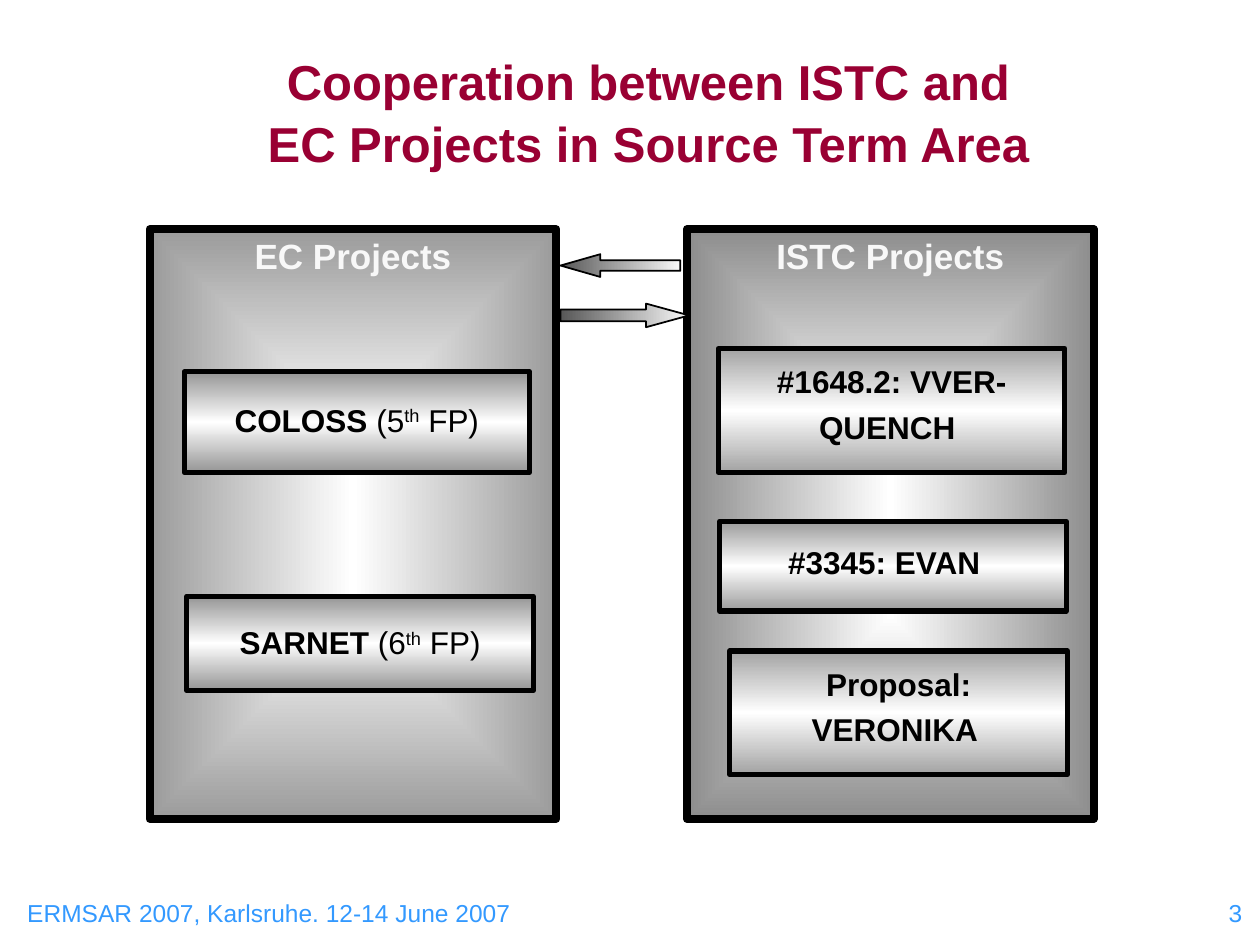
from lxml import etree
from pptx import Presentation
from pptx.dml.color import RGBColor
from pptx.enum.shapes import MSO_SHAPE as Shape
from pptx.enum.text import MSO_ANCHOR as Anchor, PP_ALIGN as Align
from pptx.oxml.ns import nsdecls, qn
from pptx.util import Pt

COLORS = {
    "title": "990033", "footer": "3399FF", "heading": "F8F8F8",
    "black": "000000", "white": "FFFFFF", "light": "F8F8F8", "dark": "575757",
    "ec_panel": "9B9B9B", "istc_panel": "8D8D8D",
    "ec_box": "959595", "istc_box": "A3A3A3", "evan_box": "9B9B9B",
}
LINEAR = '<a:lin ang="{}" scaled="0"/>'
FROM_CENTRE = ('<a:path path="rect"><a:fillToRect l="50000" t="50000" '
               'r="50000" b="50000"/></a:path>')


def rgb(name):
    return RGBColor.from_string(COLORS[name])


def set_gradient(shape, names, direction):
    """Fill a shape with evenly spaced colour stops."""
    step = 100000 // (len(names) - 1)
    stops = "".join(
        f'<a:gs pos="{i * step}"><a:srgbClr val="{COLORS[name]}"/></a:gs>'
        for i, name in enumerate(names))
    gradient = etree.fromstring(
        f'<a:gradFill {nsdecls("a")} rotWithShape="1">'
        f'<a:gsLst>{stops}</a:gsLst>{direction}</a:gradFill>')
    shape.fill.solid()
    properties = shape._element.spPr
    properties.replace(properties.find(qn("a:solidFill")), gradient)


def add_figure(page, kind, place, names, direction, line_width):
    shape = page.shapes.add_shape(kind, *map(Pt, place))
    shape.shadow.inherit = False
    set_gradient(shape, names, direction)
    shape.line.color.rgb = rgb("black")
    shape.line.width = Pt(line_width)
    return shape


def write(frame, parts, size, color, bold=None, align=Align.CENTER, spacing=None):
    """Write one paragraph from (text, run bold, superscript) parts."""
    frame.word_wrap = True
    para = frame.paragraphs[0]
    para.alignment = align
    if spacing:
        para.line_spacing = spacing
    font = para.font
    font.name, font.size, font.bold = "Arial", Pt(size), bold
    font.color.rgb = rgb(color)
    for text, run_bold, raised in parts:
        span = para.add_run()
        span.text = text
        if run_bold:
            span.font.bold = True
        if raised:
            span._r.get_or_add_rPr().set("baseline", "30000")


def add_title(page, text):
    title = page.shapes.title
    title.left, title.top, title.width, title.height = map(
        Pt, (142.5, 29.5, 456, 67.5))
    title.text_frame.vertical_anchor = Anchor.MIDDLE
    write(title.text_frame, [(text, False, False)], 28, "title", True, spacing=1.05)


def add_panel(page, left, heading, edge):
    panel = add_figure(page, Shape.RECTANGLE, (left, 131, 232.5, 337),
                       ("white", edge), FROM_CENTRE, 4.5)
    frame = panel.text_frame
    frame.vertical_anchor = Anchor.TOP
    frame.margin_left = frame.margin_right = Pt(3)
    frame.margin_top = frame.margin_bottom = Pt(3)
    write(frame, [(heading, False, False)], 20, "heading", True)


def add_project(page, place, parts, edge, spacing, bold=None, right_margin=7.2):
    box = add_figure(page, Shape.RECTANGLE, place, (edge, "white", edge),
                     LINEAR.format(5400000), 3)
    box.text_frame.vertical_anchor = Anchor.TOP
    box.text_frame.margin_right = Pt(right_margin)
    write(box.text_frame, parts, 18, "black", bold, spacing=spacing)


def add_arrow(page, kind, place, shaft, head):
    arrow = add_figure(page, kind, place, ("dark", "light"), LINEAR.format(0), 1)
    arrow.adjustments[0], arrow.adjustments[1] = shaft, head


def add_footer(page, left, width, text, align):
    box = page.shapes.add_textbox(Pt(left), Pt(509.75), Pt(width), Pt(26.5))
    write(box.text_frame, [(text, False, False)], 14, "footer", align=align)


def main():
    deck = Presentation()
    deck.slide_width, deck.slide_height = Pt(720), Pt(540)
    page = deck.slides.add_slide(deck.slide_layouts[5])

    # Footer and title
    add_footer(page, 8.5, 437, "ERMSAR 2007, Karlsruhe. 12-14 June 2007", Align.LEFT)
    add_footer(page, 620, 97, "3", Align.RIGHT)
    add_title(page, "Cooperation between ISTC and EC Projects in Source Term Area")

    # EC projects
    add_panel(page, 85.5, "EC Projects", "ec_panel")
    for name, number, place, spacing in (
            ("COLOSS ", "5", (105.25, 212.5, 197.25, 57.5), 1.6),
            ("SARNET ", "6", (106.75, 340.75, 198, 53.75), 1.55)):
        parts = [(name, True, False), ("(" + number, False, False),
                 ("th", False, True), (" FP)", False, False)]
        add_project(page, place, parts, "ec_box", spacing)

    # ISTC projects
    add_panel(page, 392.5, "ISTC Projects", "istc_panel")
    for name, place, edge, spacing, right_margin in (
            ("#1648.2: VVER-QUENCH ", (410.5, 199.25, 198, 70.75), "istc_box", 1.2, 7.2),
            ("#3345: EVAN", (411.25, 298, 198, 51.25), "evan_box", 1.4, 17.2),
            ("Proposal: VERONIKA ", (417, 372, 193, 70.5), "istc_box", 1.2, 7.2)):
        add_project(page, place, [(name, False, False)], edge, spacing, True,
                    right_margin)

    # Exchange between the two panels
    add_arrow(page, Shape.LEFT_ARROW, (320.25, 145.25, 68.5, 13), 0.46, 1.75)
    add_arrow(page, Shape.RIGHT_ARROW, (320.25, 173.5, 73.5, 13.5), 0.5, 1.82)

    deck.save("out.pptx")


if __name__ == "__main__":
    main()
